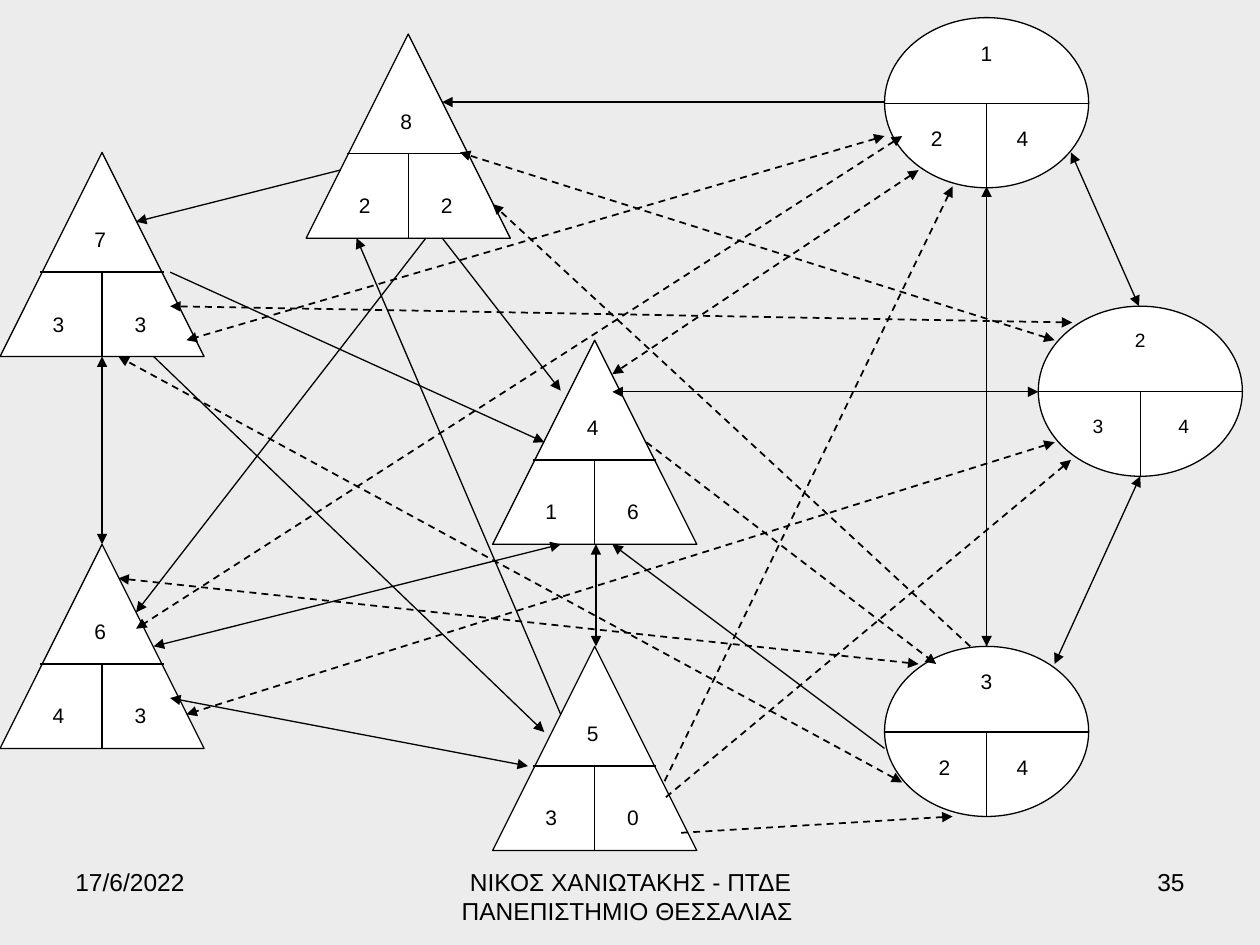
from dataclasses import dataclass

from lxml.etree import SubElement as Sub
from pptx import Presentation
from pptx.dml.color import RGBColor as Color
from pptx.enum.dml import MSO_LINE as Dash
from pptx.enum.shapes import MSO_CONNECTOR as Link, MSO_SHAPE as Shape
from pptx.enum.text import MSO_ANCHOR as Anchor, PP_ALIGN as Align
from pptx.oxml.ns import qn
from pptx.util import Inches, Pt


@dataclass(frozen=True)
class Theme:
    """Colours, font, type sizes and line widths."""
    back: Color = Color(0xEC, 0xEC, 0xEC)
    fill: Color = Color(0xFF, 0xFF, 0xFF)
    ink: Color = Color(0, 0, 0)
    font: str = "Arial"
    label: int = 12
    small: int = 11
    foot: int = 14
    thin: float = 0.75
    thick: float = 1


LOOK = Theme()
LEFT, MID, RIGHT = Align.LEFT, Align.CENTER, Align.RIGHT

OVALS = [
    (7.02, 5.13, "324", LOOK.label, (MID, MID, LEFT)),
    (7.02, 0.14, "124", LOOK.label, (MID, LEFT, LEFT)),
    (8.24, 2.43, "234", LOOK.small, (MID, MID, MID)),
]
CONES = [
    (0, 4.32, "643"),
    (0, 1.21, "733"),
    (3.91, 5.13, "530"),
    (2.43, 0.27, "822"),
    (3.91, 2.7, "416"),
]
OVAL_SPOTS = [(0.54, 0.13, 0.54), (0.27, 0.81, 0.41), (0.95, 0.81, 0.41)]
CONE_SPOTS = [(0.65, 0.54, 0.33), (0.32, 1.21, 0.33), (0.97, 1.21, 0.33)]

BOTH, HEAD, TAIL = ("headEnd", "tailEnd"), ("headEnd",), ("tailEnd",)
ARROWS = [
    (False, BOTH, [
        (8.5, 1.21, 9.04, 2.43), (7.83, 1.48, 7.83, 5.13),
        (8.24, 3.11, 4.86, 3.11), (9.05, 3.78, 8.37, 5.27),
        (4.73, 4.32, 4.73, 5.13), (4.45, 4.32, 1.22, 5.13),
        (4.19, 6.08, 1.35, 5.54), (0.81, 4.32, 0.81, 2.83),
    ]),
    (False, TAIL, [
        (7.02, 0.81, 3.51, 0.81), (7.02, 5.94, 4.86, 4.32),
        (4.45, 5.67, 2.83, 1.89), (1.35, 2.16, 4.32, 3.51),
        (1.22, 2.83, 4.32, 5.81), (3.51, 1.89, 4.45, 3.1),
        (3.38, 1.89, 1.08, 4.86), (2.7, 1.35, 1.08, 1.76),
    ]),
    (True, BOTH, [
        (7.29, 1.35, 4.86, 2.97), (7.16, 1.08, 1.08, 4.99),
        (7.02, 1.08, 1.48, 2.7), (8.37, 3.51, 1.48, 5.67),
        (8.51, 2.56, 1.35, 2.43), (8.37, 2.7, 3.65, 1.21),
        (7.29, 5.27, 0.94, 4.59), (7.16, 6.21, 0.94, 2.83),
    ]),
    (True, TAIL, [(7.7, 5.13, 3.91, 1.62), (5.13, 3.51, 7.43, 5.27)]),
    (True, HEAD, [
        (7.56, 1.48, 5.27, 6.21), (8.5, 3.65, 5.27, 6.34),
        (7.56, 6.48, 5.4, 6.61),
    ]),
]
FOOT = [
    (0.5, 2.33, "17/6/2022", LEFT),
    (3.42, 3.17, "ΝΙΚΟΣ ΧΑΝΙΩΤΑΚΗΣ - ΠΤΔΕ ΠΑΝΕΠΙΣΤΗΜΙΟ ΘΕΣΣΑΛΙΑΣ ", MID),
    (7.17, 2.33, "35", RIGHT),
]


def put(item, vals):
    """Set each named value on the item."""
    for name, val in vals.items():
        setattr(item, name, val)


def write(box, text, size, align):
    """Put one styled paragraph in a box."""
    frame = box.text_frame
    put(frame, {"word_wrap": True, "vertical_anchor": Anchor.TOP})
    para = frame.paragraphs[0]
    put(para, {"text": text, "alignment": align})
    put(para.font, {"size": Pt(size), "name": LOOK.font})
    para.font.color.rgb = LOOK.ink


def block(home, kind, x, y, w, h):
    """Add a plain white shape."""
    item = home.add_shape(kind, *map(Inches, (x, y, w, h)))
    item.shadow.inherit = False
    item.fill.solid()
    item.fill.fore_color.rgb = LOOK.fill
    return item


def outline(line, width):
    """Colour and size a line."""
    line.color.rgb = LOOK.ink
    line.width = Pt(width)


def rule(home, ends, tips=(), dashed=False):
    """Add a straight line with optional tips and dashes."""
    item = home.add_connector(Link.STRAIGHT, *map(Inches, ends))
    outline(item.line, LOOK.thick if dashed else LOOK.thin)
    if dashed:
        item.line.dash_style = Dash.DASH
    props = item.line._get_or_add_ln()
    for tip in tips:
        Sub(props, qn("a:" + tip), type="triangle")
    Sub(item._element.spPr, qn("a:effectLst"))


def node(slide, kind, x, y, high, bar, spots, text, size, sides):
    """Add a node split in three numbered parts."""
    home = slide.shapes.add_group_shape().shapes
    outline(block(home, kind, x, y, 1.62, high).line, LOOK.thin)
    start, end, drop = bar
    rule(home, (x + start, y + drop, x + end, y + drop))
    for (dx, dy, wide), mark, side in zip(spots, text, sides):
        box = block(home, Shape.RECTANGLE, x + dx, y + dy, wide, 0.27)
        box.line.fill.background()
        write(box, mark, size, side)
    rule(home, (x + 0.81, y + drop, x + 0.81, y + high))


def oval(slide, x, y, text, size, sides):
    """Add an elliptic node."""
    node(slide, Shape.OVAL, x, y, 1.35, (0, 1.62, 0.68),
         OVAL_SPOTS, text, size, sides)


def cone(slide, x, y, text):
    """Add a triangular node."""
    node(slide, Shape.ISOSCELES_TRIANGLE, x, y, 1.62, (0.32, 1.3, 0.95),
         CONE_SPOTS, text, LOOK.label, (LEFT,) * 3)


def footer(slide, x, wide, text, side):
    """Add one footer text."""
    box = slide.shapes.add_textbox(*map(Inches, (x, 6.83, wide, 0.52)))
    write(box, text, LOOK.foot, side)


def main():
    """Build and save the slide."""
    deck = Presentation()
    put(deck, {"slide_width": Inches(10), "slide_height": Inches(7.5)})
    slide = deck.slides.add_slide(deck.slide_layouts[6])
    slide.background.fill.solid()
    slide.background.fill.fore_color.rgb = LOOK.back
    for row in OVALS:
        oval(slide, *row)
    for row in CONES:
        cone(slide, *row)
    for dashed, tips, rows in ARROWS:
        for ends in rows:
            rule(slide.shapes, ends, tips, dashed)
    for row in FOOT:
        footer(slide, *row)
    deck.save("out.pptx")


if __name__ == "__main__":
    main()
